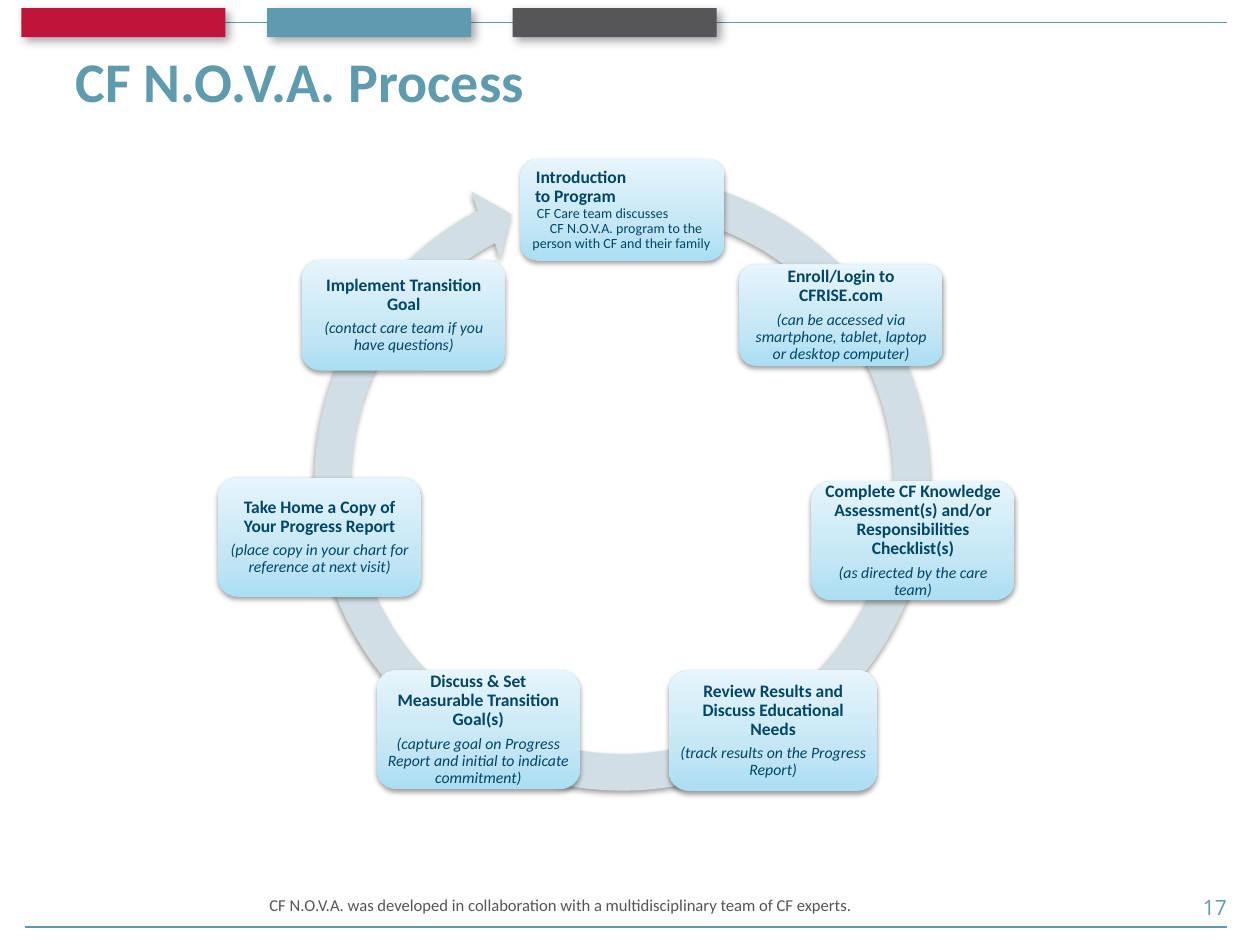
import math

import pptx
import pptx.dml.color
import pptx.enum.shapes
import pptx.enum.text
import pptx.oxml
import pptx.oxml.ns
import pptx.util
from lxml import etree

Pt = pptx.util.Pt
qn = pptx.oxml.ns.qn
ALIGN = pptx.enum.text.PP_ALIGN
ANCHOR = pptx.enum.text.MSO_ANCHOR
SHAPES = pptx.enum.shapes.MSO_SHAPE

COLORS = {
    "red": "C0143C", "teal": "5F9BAF", "gray": "56565A", "navy": "004666",
    "ring": "D1DEE3", "black": "000000",
    "card_low": "ABDEF3", "card_mid": "C4E6F5", "card_high": "E7F5FC",
}
CARD_STOPS = [(0, "card_low"), (35, "card_mid"), (100, "card_high")]
SOFT_SHADOW = (38, 3.1, 1.6, 90)
BAR_SHADOW = (35, 5.5, 3, 45)

INTRO_LINES = [
    ("Introduction", 10, True, 3),
    ("to Program", 10, True, 2.5),
    ("CF Care team discusses", 8, False, 3.5),
    ("CF N.O.V.A. program to the", 8, False, 11),
    ("person with CF and their family", 8, False, 1),
]
INTRO_BOX = (297.4, 90.7, 116.6, 58.3)
STEPS = [
    ((422.5, 151.1, 116.2, 58), "Enroll/Login to CFRISE.com",
     "(can be accessed via smartphone, tablet, laptop or desktop computer)"),
    ((463.6, 275, 116.2, 68), "Complete CF Knowledge Assessment(s) and/or Responsibilities Checklist(s)",
     "(as directed by the care team)"),
    ((382.2, 383, 119.2, 69), "Review Results and Discuss Educational Needs",
     "(track results on the Progress Report)"),
    ((215.2, 383, 116.2, 68), "Discuss & Set Measurable Transition Goal(s)",
     "(capture goal on Progress Report and initial to indicate commitment)"),
    ((124.5, 272.9, 116.2, 68.2), "Take Home a Copy of Your Progress Report",
     "(place copy in your chart for reference at next visit)"),
    ((172.6, 148.6, 116.2, 63.2), "Implement Transition Goal",
     "(contact care team if you have questions)"),
]


def rgb(name):
    return pptx.dml.color.RGBColor.from_string(COLORS[name])


def set_font(paragraph, size, color, bold=False, italic=False, name="Calibri"):
    font = paragraph.font
    font.name, font.size, font.bold, font.italic = name, Pt(size), bold, italic
    font.color.rgb = rgb(color)


def add_shadow(shape, alpha, blur, distance, direction):
    shape.shadow.inherit = False
    effects = shape._element.spPr.find(qn("a:effectLst"))
    outer = etree.SubElement(
        effects, qn("a:outerShdw"), blurRad=str(Pt(blur)), dist=str(Pt(distance)),
        dir=str(direction * 60000), algn="ctr", rotWithShape="0")
    color = etree.SubElement(outer, qn("a:srgbClr"), val=COLORS["black"])
    etree.SubElement(color, qn("a:alpha"), val=str(alpha * 1000))


def fill_solid(shape, color, shadow):
    shape.fill.solid()
    shape.fill.fore_color.rgb = rgb(color)
    shape.line.fill.background()
    add_shadow(shape, *shadow)


def fill_card(shape):
    shape.fill.gradient()
    shape.fill.gradient_angle = 90
    stops = shape._element.spPr.find(qn("a:gradFill")).find(qn("a:gsLst"))
    for stop in list(stops):
        stops.remove(stop)
    for position, color in CARD_STOPS:
        stop = etree.SubElement(stops, qn("a:gs"), pos=str(position * 1000))
        etree.SubElement(stop, qn("a:srgbClr"), val=COLORS[color])
    shape.line.fill.background()
    add_shadow(shape, *SOFT_SHADOW)


def add_rule(slide, left, right, top, weight):
    line = slide.shapes.add_connector(
        pptx.enum.shapes.MSO_CONNECTOR.STRAIGHT, Pt(left), Pt(top), Pt(right), Pt(top))
    line.line.color.rgb = rgb("teal")
    line.line.width = Pt(weight)
    etree.SubElement(line._element.spPr, qn("a:effectLst"))


def add_header(slide, left, top, width, height):
    add_rule(slide, left, left + width, top + height / 2, 0.75)
    bar_width, step = 116.6, 140.4
    for index, color in enumerate(("red", "teal", "gray")):
        bar = slide.shapes.add_shape(
            SHAPES.RECTANGLE, Pt(left + index * step), Pt(top), Pt(bar_width), Pt(height))
        fill_solid(bar, color, BAR_SHADOW)


def add_title(slide, left, top, width, height):
    title = slide.shapes.title
    title.left, title.top, title.width, title.height = map(Pt, (left, top, width, height))
    title.text_frame.text = "CF N.O.V.A. Process"
    title.text_frame.vertical_anchor = ANCHOR.TOP
    paragraph = title.text_frame.paragraphs[0]
    paragraph.alignment = ALIGN.LEFT
    set_font(paragraph, 32, "teal", bold=True)


def polar(center, radius, angle):
    return center + radius * math.cos(angle), center + radius * math.sin(angle)


def arc_curves(center, radius, start, end, count=5):
    step = math.radians(end - start) / count
    pull = 4 / 3 * math.tan(step / 4)
    curves = []
    for index in range(count):
        first = math.radians(start) + index * step
        last = first + step
        x1, y1 = polar(center, radius, first)
        x2, y2 = polar(center, radius, last)
        reach = pull * radius
        curves.append([
            (x1 - reach * math.sin(first), y1 + reach * math.cos(first)),
            (x2 + reach * math.sin(last), y2 - reach * math.cos(last)),
            (x2, y2)])
    return curves


def add_ring_arrow(slide, left, top, size):
    center, outer, inner = size / 2, 176, 155
    start, end = -77.5, 242
    head = [(-86.4, -166.4), (-63.4, -153.4), (-69.9, -126.8)]
    unit = Pt(1) // 100
    builder = slide.shapes.build_freeform(0, 0, scale=unit)
    side = round(size * 100)
    builder.add_line_segments([(side, 0), (side, side), (0, side)], close=True)
    ring = builder.convert_to_shape(Pt(left), Pt(top))
    outline = next(ring._element.iter(qn("a:path")))
    for step in list(outline):
        outline.remove(step)

    def draw(tag, points):
        step = etree.SubElement(outline, qn(tag))
        for x, y in points:
            etree.SubElement(step, qn("a:pt"), x=str(round(x * 100)), y=str(round(y * 100)))

    draw("a:moveTo", [polar(center, outer, math.radians(start))])
    for curve in arc_curves(center, outer, start, end):
        draw("a:cubicBezTo", curve)
    for x, y in head:
        draw("a:lnTo", [(center + x, center + y)])
    draw("a:lnTo", [polar(center, inner, math.radians(end))])
    for curve in arc_curves(center, inner, end, start):
        draw("a:cubicBezTo", curve)
    etree.SubElement(outline, qn("a:close"))
    fill_solid(ring, "ring", SOFT_SHADOW)


def add_card(slide, left, top, width, height):
    card = slide.shapes.add_shape(
        SHAPES.ROUNDED_RECTANGLE, Pt(left), Pt(top), Pt(width), Pt(height))
    fill_card(card)
    frame = card.text_frame
    frame.word_wrap = True
    frame.vertical_anchor = ANCHOR.MIDDLE
    frame.margin_left = frame.margin_right = Pt(3)
    frame.margin_top = frame.margin_bottom = Pt(3)
    return frame


def add_card_line(frame, index, text, alignment):
    paragraph = frame.add_paragraph() if index else frame.paragraphs[0]
    paragraph.text = text
    paragraph.alignment = alignment
    paragraph.line_spacing = 0.9
    return paragraph


def add_intro(slide, box):
    frame = add_card(slide, *box)
    for index, (text, size, bold, indent) in enumerate(INTRO_LINES):
        paragraph = add_card_line(frame, index, text, ALIGN.LEFT)
        paragraph._p.get_or_add_pPr().set("marL", str(Pt(indent)))
        set_font(paragraph, size, "navy", bold=bold)


def add_step(slide, box, heading, detail):
    frame = add_card(slide, *box)
    set_font(add_card_line(frame, 0, heading, ALIGN.CENTER), 10, "navy", bold=True)
    paragraph = add_card_line(frame, 1, detail, ALIGN.CENTER)
    paragraph.space_before = Pt(3.5)
    set_font(paragraph, 9, "navy", italic=True)


def add_label(slide, box, text, alignment, size, color, name):
    frame = slide.shapes.add_textbox(*map(Pt, box)).text_frame
    frame.word_wrap = True
    frame.vertical_anchor = ANCHOR.MIDDLE
    paragraph = frame.paragraphs[0]
    paragraph.text = text
    paragraph.alignment = alignment
    set_font(paragraph, size, color, name=name)


def add_footer(slide, left, top, width, height):
    add_rule(slide, left, left + width, top + height, 1)
    add_label(slide, (146.9, top, 512, 28.8),
              "CF N.O.V.A. was developed in collaboration with a multidisciplinary team of CF experts.",
              ALIGN.LEFT, 9.5, "gray", "Calibri")
    add_label(slide, (648.4, top + 1.4, 59.8, 28.8), "17", ALIGN.RIGHT, 12, "teal", "Open Sans")


def main():
    presentation = pptx.Presentation()
    presentation.slide_width, presentation.slide_height = Pt(720), Pt(540)
    slide = presentation.slides.add_slide(presentation.slide_layouts[5])
    add_header(slide, 12.2, 4.7, 689, 16.5)
    add_title(slide, 36, 23, 648, 59)
    add_ring_arrow(slide, 168.5, 88.6, 374.4)
    add_intro(slide, INTRO_BOX)
    for box, heading, detail in STEPS:
        add_step(slide, box, heading, detail)
    add_footer(slide, 14.4, 502.6, 686.9, 27.3)
    presentation.save("out.pptx")


if __name__ == "__main__":
    main()
